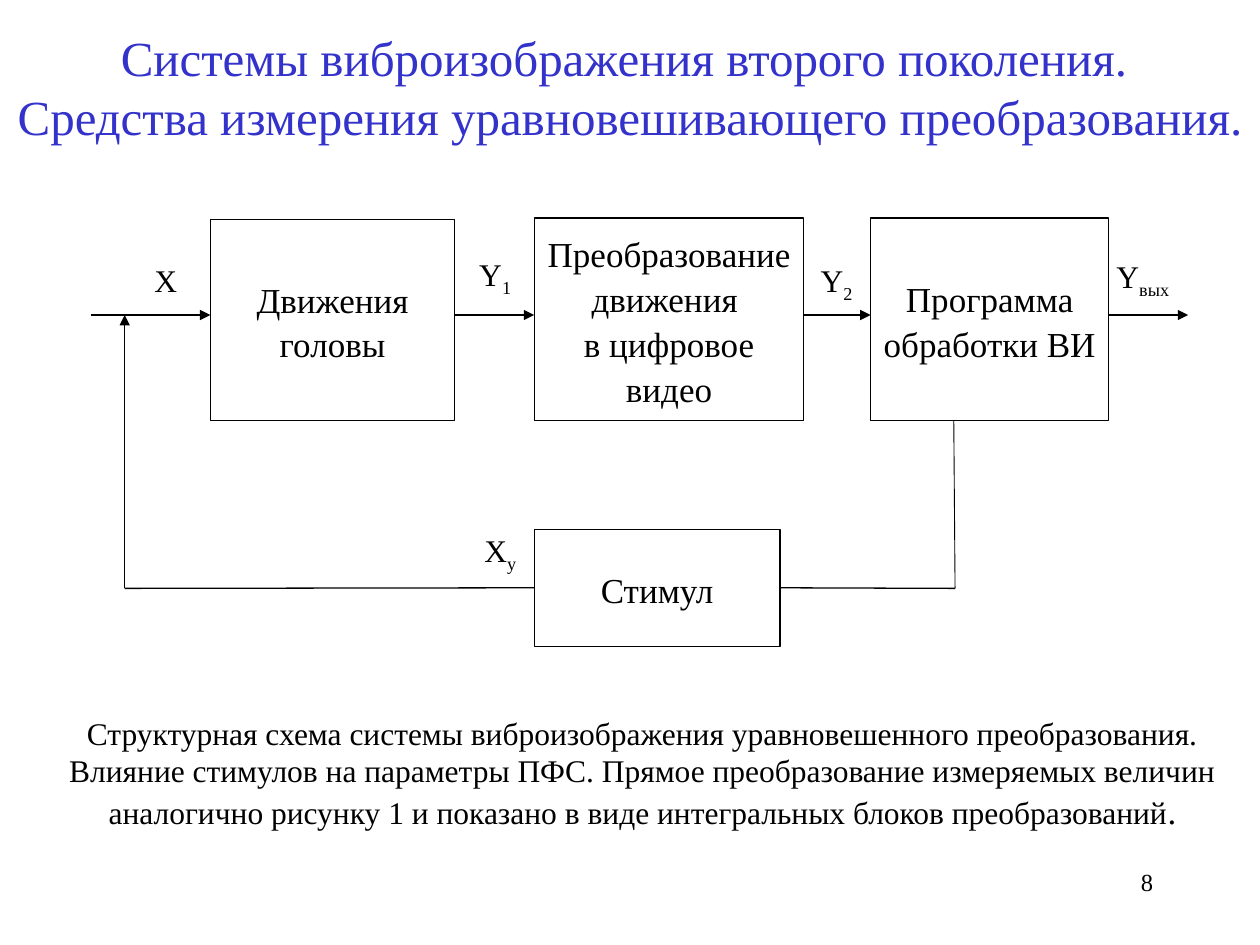
from lxml import etree
from pptx import Presentation, util as u
from pptx.dml.color import RGBColor
from pptx.enum import shapes, text
from pptx.oxml.ns import qn

THEME = {
    "font": "Times New Roman",
    "ink": RGBColor(0x00, 0x00, 0x00),
    "title": RGBColor(0x33, 0x33, 0xCC),
    "paper": RGBColor(0xFF, 0xFF, 0xFF),
    "title_size": 28, "box_size": 20, "label_size": 18, "number_size": 14,
    "line": 0.75, "thin": 0.5,
}
CENTER, RIGHT = text.PP_ALIGN.CENTER, text.PP_ALIGN.RIGHT
MIDDLE, TOP = text.MSO_ANCHOR.MIDDLE, text.MSO_ANCHOR.TOP
BLOCK = {"line_spacing": 1.07, "space_after": u.Pt(8)}

# Content: a paragraph is a list of (text, run format) pairs
TITLE = [[("Системы виброизображения второго поколения. \v"
           "Средства измерения уравновешивающего преобразования.", {})]]
CAPTION = [[("Структурная схема системы виброизображения уравновешенного преобразования. "
             "Влияние стимулов на параметры ПФС. Прямое преобразование измеряемых величин "
             "аналогично рисунку 1 и показано в виде интегральных блоков преобразований", {}),
            (".", {"size": u.Pt(20)})]]
NUMBER = [[("8", {})]]

BOXES = {  # name: (left, top, width, height), paragraphs
    "head": ((1.67, 1.74, 1.94, 1.6), ["Движения головы"]),
    "video": ((4.24, 1.73, 2.14, 1.61), ["Преобразование движения ", "в цифровое видео"]),
    "program": ((6.91, 1.73, 1.89, 1.61), ["Программа обработки ВИ"]),
    "stimulus": ((4.24, 4.2, 1.95, 0.93), ["Стимул"]),
}
LABELS = [  # letter, subscript, (left, top, width, height)
    ("X", "", (1.05, 2, 0.53, 0.64)),
    ("Y", "1", (3.62, 1.95, 0.62, 0.64)),
    ("Y", "2", (6.33, 2, 0.62, 0.8)),
    ("X", "y", (3.62, 4.14, 0.7, 0.93)),
    ("Y", "вых", (8.66, 1.97, 0.82, 0.45)),
]
FLOW_Y, LOOP_Y = 2.5, 4.67          # forward path and feedback path
LOOP_LEFT, LOOP_RIGHT = 0.99, 7.58


def put_text(sp, paragraphs, size, color=THEME["ink"], align=CENTER,
             anchor=TOP, inset=0.1, **spacing):
    tf = sp.text_frame
    frame = {"word_wrap": True, "vertical_anchor": anchor,
             "margin_left": u.Inches(inset), "margin_right": u.Inches(inset)}
    for name, value in frame.items():
        setattr(tf, name, value)
    for i, runs in enumerate(paragraphs):
        p = tf.add_paragraph() if i else tf.paragraphs[0]
        p.alignment = align
        for name, value in spacing.items():
            if name != "space_after" or i == len(paragraphs) - 1:
                setattr(p, name, value)
        for content, extra in runs:
            for n, part in enumerate(content.split("\v")):
                if n:
                    p.add_line_break()
                r = p.add_run()
                r.text = part
                fmt = {"name": THEME["font"], "size": u.Pt(size), **extra}
                base = fmt.pop("baseline", None)
                for name, value in fmt.items():
                    setattr(r.font, name, value)
                r.font.color.rgb = color
                if base:
                    r._r.get_or_add_rPr().set("baseline", base)


def add_text(s, at, paragraphs, size, **fmt):
    put_text(s.shapes.add_textbox(*map(u.Inches, at)), paragraphs, size, **fmt)


def add_box(s, at, lines):
    sp = s.shapes.add_shape(shapes.MSO_SHAPE.RECTANGLE, *map(u.Inches, at))
    sp.shadow.inherit = False
    sp.fill.solid()
    sp.fill.fore_color.rgb = THEME["paper"]
    sp.line.color.rgb = THEME["ink"]
    sp.line.width = u.Pt(THEME["line"])
    put_text(sp, [[(line, {})] for line in lines], THEME["box_size"],
             anchor=MIDDLE, inset=0.08, **BLOCK)
    return sp


def add_line(s, start, end, arrow=False, width=THEME["line"]):
    c = s.shapes.add_connector(shapes.MSO_CONNECTOR.STRAIGHT,
                               *map(u.Inches, (*start, *end)))
    c.line.color.rgb = THEME["ink"]
    c.line.width = u.Pt(width)
    if arrow:
        etree.SubElement(c.line._get_or_add_ln(), qn("a:tailEnd"), type="triangle")
    etree.SubElement(c._element.spPr, qn("a:effectLst"))
    return c


def main():
    prs = Presentation()
    prs.slide_width, prs.slide_height = u.Inches(10), u.Inches(7.5)
    s = prs.slides.add_slide(prs.slide_layouts[6])

    # Title, caption and slide number
    add_text(s, (0, 0.17, 10, 1.03), TITLE, THEME["title_size"],
             color=THEME["title"], anchor=MIDDLE)
    add_text(s, (0.25, 5.61, 9.7, 1.04), CAPTION, THEME["label_size"], anchor=MIDDLE)
    add_text(s, (8.74, 6.83, 0.51, 0.5), NUMBER, THEME["number_size"], align=RIGHT)

    # Blocks and signal labels
    blocks = {name: add_box(s, at, lines) for name, (at, lines) in BOXES.items()}
    for letter, sub, at in LABELS:
        runs = [(letter, {})] + ([(sub, {"baseline": "-25000"})] if sub else [])
        add_text(s, at, [runs], THEME["label_size"], **BLOCK)

    # Forward path: an arrow into each block and one out of the last
    row = [BOXES[name][0] for name in ("head", "video", "program")]
    starts = [0.72] + [left + width for left, _, width, _ in row]
    ends = [left for left, *_ in row] + [9.43]
    for x1, x2 in zip(starts, ends):
        add_line(s, (x1, FLOW_Y), (x2, FLOW_Y), arrow=True)

    # Feedback path through the stimulus
    left, _, width, _ = BOXES["stimulus"][0]
    add_line(s, (7.57, 3.34), (LOOP_RIGHT, LOOP_Y), width=THEME["thin"])
    add_line(s, (left + width, LOOP_Y), (LOOP_RIGHT, LOOP_Y)).begin_connect(
        blocks["stimulus"], 3)
    add_line(s, (left, LOOP_Y), (LOOP_LEFT, LOOP_Y)).begin_connect(
        blocks["stimulus"], 1)
    add_line(s, (LOOP_LEFT, LOOP_Y), (LOOP_LEFT, FLOW_Y), arrow=True)

    prs.save("out.pptx")


if __name__ == "__main__":
    main()
